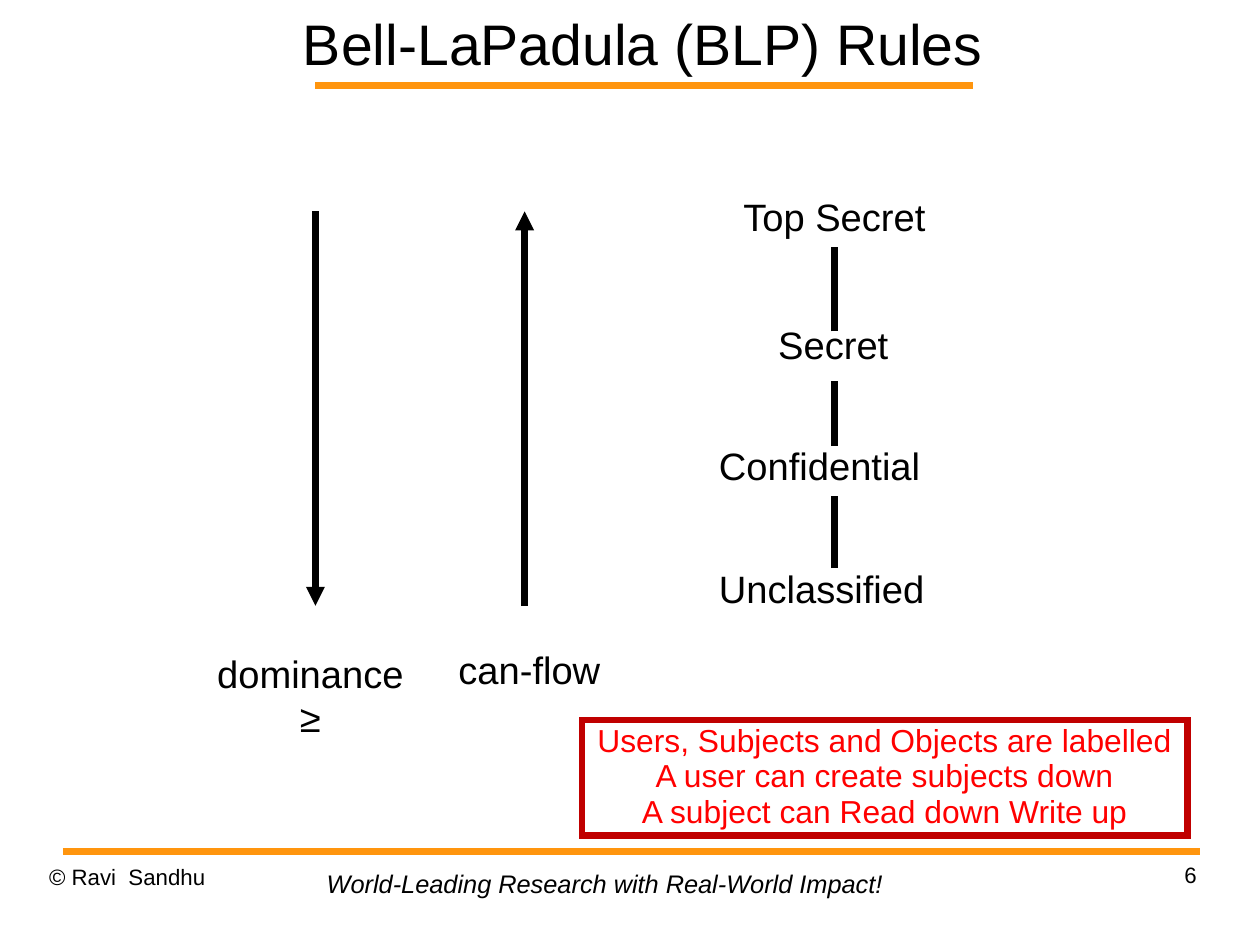
import dataclasses

import lxml.etree
import pptx
import pptx.dml.color
import pptx.enum.shapes
import pptx.enum.text
import pptx.oxml.ns
import pptx.util

Inches = pptx.util.Inches
Align = pptx.enum.text.PP_ALIGN
Anchor = pptx.enum.text.MSO_ANCHOR
AutoSize = pptx.enum.text.MSO_AUTO_SIZE
qualified = pptx.oxml.ns.qn

CM_PER_INCH = 2.54
NO_INSETS = (0, 0)
LABEL_INSETS = (0.07, 0.03)
DEFAULT_INSETS = (0.1, 0.05)


def colour(code):
    return pptx.dml.color.RGBColor.from_string(code)


def set_attributes(target, values):
    for name, value in values.items():
        setattr(target, name, value)


@dataclasses.dataclass(frozen=True)
class Theme:
    font: str = "Arial"
    ink: str = "000000"
    rule: str = "FF950E"
    frame: str = "C00000"
    note: str = "FF0000"
    title_size: float = 36
    label_size: float = 24
    note_size: float = 20
    slogan_size: float = 16
    footer_size: float = 14
    rule_width: float = 4.31
    line_width: float = 4


class SlideBuilder:
    def __init__(self, slide, theme):
        self.slide = slide
        self.theme = theme

    def fill_text(self, shape, lines, size, code=None, align=Align.LEFT, spacing=1.0,
                  insets=LABEL_INSETS, wrap=True, anchor=Anchor.TOP,
                  auto_size=AutoSize.NONE, italic=False):
        frame = shape.text_frame
        side, edge = (Inches(inset) for inset in insets)
        set_attributes(frame, {
            "text": "\n".join(lines), "word_wrap": wrap, "auto_size": auto_size,
            "vertical_anchor": anchor, "margin_left": side, "margin_right": side,
            "margin_top": edge, "margin_bottom": edge,
        })
        for paragraph in frame.paragraphs:
            set_attributes(paragraph, {"alignment": align, "line_spacing": spacing})
            for run in paragraph.runs:
                set_attributes(run.font, {"name": self.theme.font, "italic": italic,
                                          "size": pptx.util.Pt(size)})
                run.font.color.rgb = colour(code or self.theme.ink)

    def title(self, text, left, top, width, height):
        shape = self.slide.shapes.title
        set_attributes(shape, {"left": Inches(left), "top": Inches(top),
                               "width": Inches(width), "height": Inches(height)})
        self.fill_text(shape, [text], self.theme.title_size, align=Align.CENTER,
                       insets=NO_INSETS, anchor=Anchor.MIDDLE)

    def text(self, lines, left, top, width, height, size, **style):
        box = self.slide.shapes.add_textbox(*map(Inches, (left, top, width, height)))
        self.fill_text(box, lines, size, **style)

    def label(self, lines, left, top, width, height=0.46, align=Align.LEFT, spacing=0.87):
        self.text(lines, left, top, width, height, self.theme.label_size, align=align,
                  spacing=spacing, wrap=False, auto_size=AutoSize.SHAPE_TO_FIT_TEXT)

    def line(self, start, end, code=None, width=None, arrow=False):
        connector = self.slide.shapes.add_connector(
            pptx.enum.shapes.MSO_CONNECTOR.STRAIGHT, *map(Inches, (*start, *end)))
        connector.line.color.rgb = colour(code or self.theme.ink)
        connector.line.width = pptx.util.Pt(width or self.theme.line_width)
        properties = connector._element.spPr
        if arrow:
            lxml.etree.SubElement(properties.find(qualified("a:ln")),
                                  qualified("a:tailEnd"), type="triangle")
        lxml.etree.SubElement(properties, qualified("a:effectLst"))

    def rule(self, left, right, top):
        self.line((left, top), (right, top), self.theme.rule, self.theme.rule_width)

    def framed_note(self, lines, left, top, width, height):
        shape = self.slide.shapes.add_shape(
            pptx.enum.shapes.MSO_SHAPE.RECTANGLE,
            *map(Inches, (left, top, width, height)))
        shape.shadow.inherit = False
        shape.fill.background()
        shape.line.color.rgb = colour(self.theme.frame)
        shape.line.width = pptx.util.Pt(self.theme.line_width)
        lxml.etree.SubElement(shape._element.spPr.find(qualified("a:ln")),
                              qualified("a:miter"), lim="800000")
        self.fill_text(shape, lines, self.theme.note_size, self.theme.note,
                       align=Align.CENTER, spacing=0.94)


def add_footer(builder):
    theme = builder.theme
    builder.rule(0.55, 10.5, 7.45)
    builder.text(["© Ravi  Sandhu"], 0.43, 7.55, 2.57, 0.57, theme.footer_size,
                 insets=NO_INSETS, spacing=1.01)
    builder.text(["World-Leading Research with Real-World Impact!"],
                 2.76, 7.55, 5.08, 0.37, theme.slogan_size, italic=True, wrap=False,
                 insets=DEFAULT_INSETS, auto_size=AutoSize.SHAPE_TO_FIT_TEXT)
    builder.text(["6"], 7.9, 7.53, 2.57, 0.57, theme.footer_size,
                 insets=NO_INSETS, align=Align.RIGHT, spacing=1.01)


def add_levels(builder):
    """Draw the security levels and the links between them."""
    for name, left, top, width, align in (
        ("Top Secret", 6.34, 1.72, 1.92, Align.CENTER),
        ("Secret", 6.68, 2.84, 1.22, Align.CENTER),
        ("Confidential", 6.22, 3.9, 2.12, Align.LEFT),
        ("Unclassified", 6.22, 4.97, 2.16, Align.LEFT),
    ):
        builder.label([name], left, top, width, align=align)
    for top, bottom in ((2.16, 2.9), (3.33, 3.9), (4.34, 4.97)):
        builder.line((7.3, bottom), (7.3, top))


def add_directions(builder):
    """Draw the dominance and can-flow arrows with their labels."""
    top, bottom = 1.85, 5.3
    builder.line((2.76, top), (2.76, bottom), arrow=True)
    builder.line((4.59, bottom), (4.59, top), arrow=True)
    builder.label(["dominance", "≥"], 1.74, 5.68, 1.95, 0.89, Align.CENTER, 0.97)
    builder.label(["can-flow"], 3.94, 5.68, 1.55)


def main():
    presentation = pptx.Presentation()
    presentation.slide_width = Inches(28 / CM_PER_INCH)
    presentation.slide_height = Inches(21 / CM_PER_INCH)
    title_only = presentation.slide_layouts.get_by_name("Title Only")
    builder = SlideBuilder(presentation.slides.add_slide(title_only), Theme())

    builder.title("Bell-LaPadula (BLP) Rules", 2.41, 0, 6.43, 0.75)
    builder.rule(2.76, 8.51, 0.75)
    add_footer(builder)
    add_levels(builder)
    add_directions(builder)
    builder.framed_note([
        "Users, Subjects and Objects are labelled",
        "A user can create subjects down",
        "A subject can Read down Write up",
    ], 5.09, 6.3, 5.3, 1.01)
    presentation.save("out.pptx")


if __name__ == "__main__":
    main()
